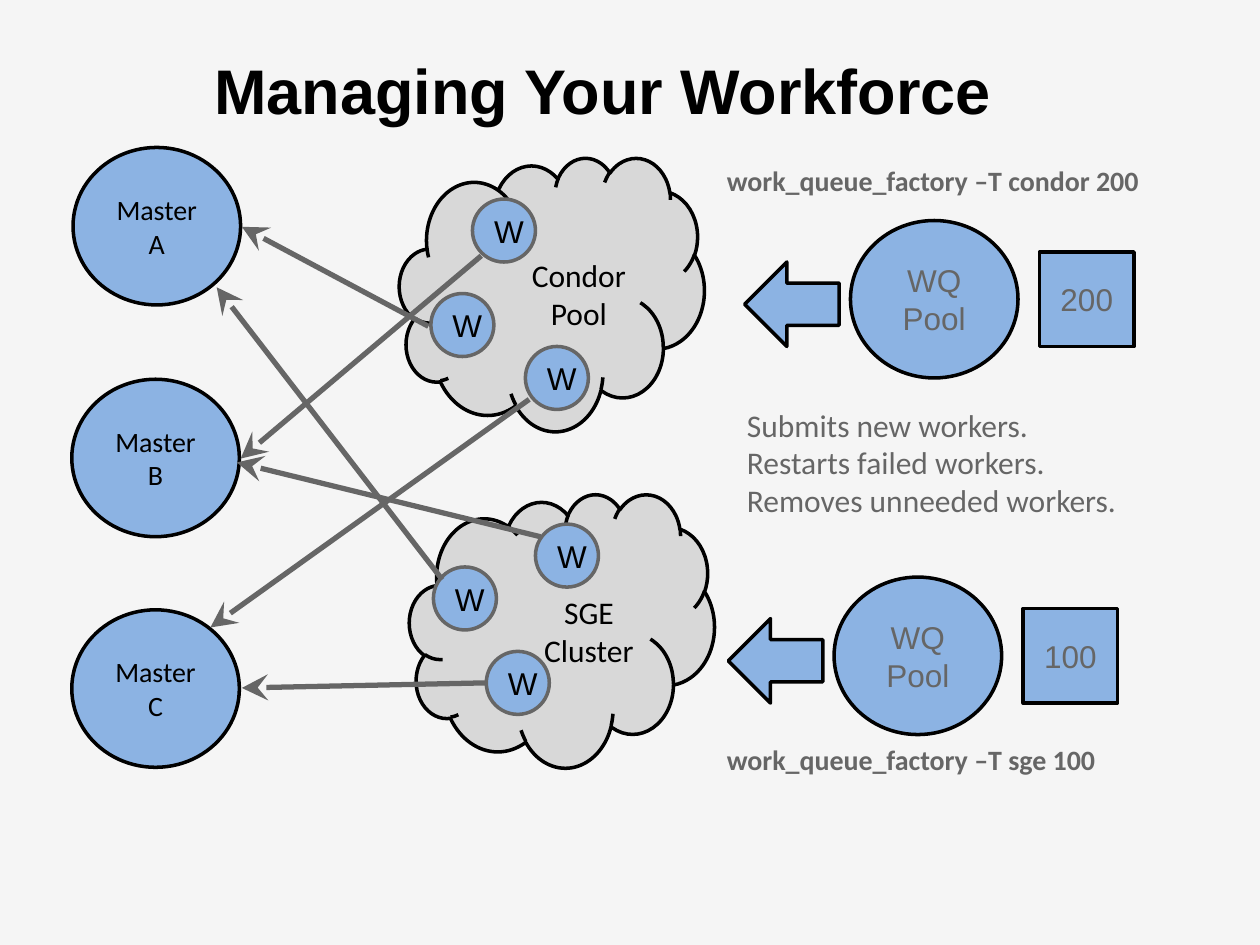
import pptx
import pptx.util
import pptx.dml.color
import pptx.enum.shapes
import pptx.enum.text
import pptx.oxml.ns
from dataclasses import dataclass
from lxml import etree

Inches = pptx.util.Inches
Pt = pptx.util.Pt
MSO_SHAPE = pptx.enum.shapes.MSO_SHAPE
PP_ALIGN = pptx.enum.text.PP_ALIGN
MSO_ANCHOR = pptx.enum.text.MSO_ANCHOR


def color(value):
    return pptx.dml.color.RGBColor.from_string(value)


@dataclass(frozen=True)
class Theme:
    background = color("F5F5F5")
    blue = color("8CB3E3")
    cloud = color("D8D8D8")
    gray = color("666666")
    black = color("000000")
    heading_font = "Arial"
    body_font = "Calibri"
    title_size = Pt(36)
    large_size = Pt(18)
    small_size = Pt(16)
    outline = Pt(2)
    arrow = Pt(3)


THEME = Theme()
TITLE = dict(name=THEME.heading_font, size=THEME.title_size, bold=True, color=THEME.black)
MASTER = dict(name=THEME.body_font, size=THEME.small_size, color=THEME.black)
CLOUD = dict(name=THEME.body_font, size=THEME.large_size, color=THEME.black)
WORKER = dict(name=THEME.heading_font, size=THEME.large_size, color=THEME.black)
POOL = dict(name=THEME.heading_font, size=THEME.large_size, color=THEME.gray)
NOTE = dict(name=THEME.body_font, size=THEME.large_size, color=THEME.gray)
COMMAND = dict(name=THEME.body_font, size=THEME.small_size, bold=True, color=THEME.gray)

MASTERS = [("A", 0.58, 1.17), ("B", 0.57, 3.01), ("C", 0.57, 4.84)]
CLOUDS = [(("Condor", "Pool"), 3.17, 1.25), (("SGE", "Cluster"), 3.25, 3.92)]
# Worker circle position, then where its arrow starts and ends
WORKERS = [
    ((3.42, 2.33), (3.4, 2.59), (1.92, 1.8)),
    ((3.75, 1.58), (3.82, 2.03), (1.91, 3.64)),
    ((4.17, 2.75), (4.2, 3.17), (1.67, 4.98)),
    ((3.86, 5.17), (3.85, 5.42), (1.92, 5.46)),
    ((4.25, 4.16), (4.29, 4.26), (1.88, 3.67)),
    ((3.44, 4.5), (3.51, 4.6), (1.72, 2.28)),
]
# Worker count, pool position, command, top of command
FACTORIES = [
    ("200", 6.75, 1.75, "work_queue_factory –T condor 200", 1.25),
    ("100", 6.62, 4.58, "work_queue_factory –T sge 100", 5.84),
]


def write_lines(frame, lines, style, alignment=PP_ALIGN.LEFT, anchor=MSO_ANCHOR.TOP):
    frame.word_wrap = True
    frame.auto_size = pptx.enum.text.MSO_AUTO_SIZE.NONE
    frame.vertical_anchor = anchor
    for index, line in enumerate(lines):
        paragraph = frame.paragraphs[0] if index == 0 else frame.add_paragraph()
        paragraph.alignment = alignment
        font = paragraph.add_run().font
        paragraph.runs[0].text = line
        for key, value in style.items():
            if key == "color":
                font.color.rgb = value
            else:
                setattr(font, key, value)


def add_box(slide, kind, left, top, width, height, lines=(), style=None,
            fill=THEME.blue, line=THEME.black):
    shape = slide.shapes.add_shape(
        kind, Inches(left), Inches(top), Inches(width), Inches(height))
    shape.shadow.inherit = False
    shape.fill.solid()
    shape.fill.fore_color.rgb = fill
    shape.line.color.rgb = line
    shape.line.width = THEME.outline
    write_lines(shape.text_frame, lines, style, PP_ALIGN.CENTER, MSO_ANCHOR.MIDDLE)
    return shape


def add_text(slide, left, top, width, height, lines, style):
    box = slide.shapes.add_textbox(
        Inches(left), Inches(top), Inches(width), Inches(height))
    write_lines(box.text_frame, lines, style)


def add_arrow(slide, start, end):
    connector = slide.shapes.add_connector(
        pptx.enum.shapes.MSO_CONNECTOR.STRAIGHT,
        *(Inches(value) for value in (*start, *end)))
    connector.line.color.rgb = THEME.gray
    connector.line.width = THEME.arrow
    qualified = pptx.oxml.ns.qn
    etree.SubElement(connector.line._get_or_add_ln(), qualified("a:tailEnd"),
                     type="stealth", w="lg", len="lg")
    etree.SubElement(connector._element.spPr, qualified("a:effectLst"))


def add_title(slide, text):
    title = slide.shapes.title
    placement = dict(left=0.41, top=0.36, width=8.75, height=1.49)
    for key, value in placement.items():
        setattr(title, key, Inches(value))
    write_lines(title.text_frame, [text], TITLE, PP_ALIGN.CENTER)


def add_cloud(slide, lines, left, top):
    """Draw a cloud with its label moved right, clear of the workers."""
    cloud = add_box(slide, MSO_SHAPE.CLOUD, left, top, 2.42, 2.17, lines, CLOUD,
                    fill=THEME.cloud)
    insets = dict(margin_left=0.6, margin_right=0, margin_top=0.15)
    for key, value in insets.items():
        setattr(cloud.text_frame, key, Inches(value))


def add_factory(slide, count, left, top, command, command_top):
    """Draw a pool with its worker count, submit arrow and command."""
    add_box(slide, MSO_SHAPE.OVAL, left, top, 1.33, 1.25, ["WQ", "Pool"], POOL)
    add_box(slide, MSO_SHAPE.RECTANGLE, left + 1.5, top + 0.25, 0.75, 0.75, [count], POOL)
    add_box(slide, MSO_SHAPE.LEFT_ARROW, left - 0.84, top + 0.33, 0.75, 0.67)
    add_text(slide, 5.67, command_top, 3.65, 0.52, [command], COMMAND)


def main():
    presentation = pptx.Presentation()
    presentation.slide_width = Inches(10)
    presentation.slide_height = Inches(7.5)
    slide = presentation.slides.add_slide(presentation.slide_layouts[5])
    slide.background.fill.solid()
    slide.background.fill.fore_color.rgb = THEME.background

    add_title(slide, "Managing Your Workforce")
    for lines, left, top in CLOUDS:
        add_cloud(slide, lines, left, top)
    for name, left, top in MASTERS:
        add_box(slide, MSO_SHAPE.OVAL, left, top, 1.33, 1.25, ["Master", name], MASTER)
    for position, start, end in WORKERS:
        add_box(slide, MSO_SHAPE.OVAL, *position, 0.5, 0.5, ["W"], WORKER, line=THEME.gray)
        add_arrow(slide, start, end)
    add_text(slide, 5.83, 3.17, 3.16, 1, [
        "Submits new workers.",
        "Restarts failed workers.",
        "Removes unneeded workers.",
    ], NOTE)
    for factory in FACTORIES:
        add_factory(slide, *factory)
    presentation.save("out.pptx")


if __name__ == "__main__":
    main()
